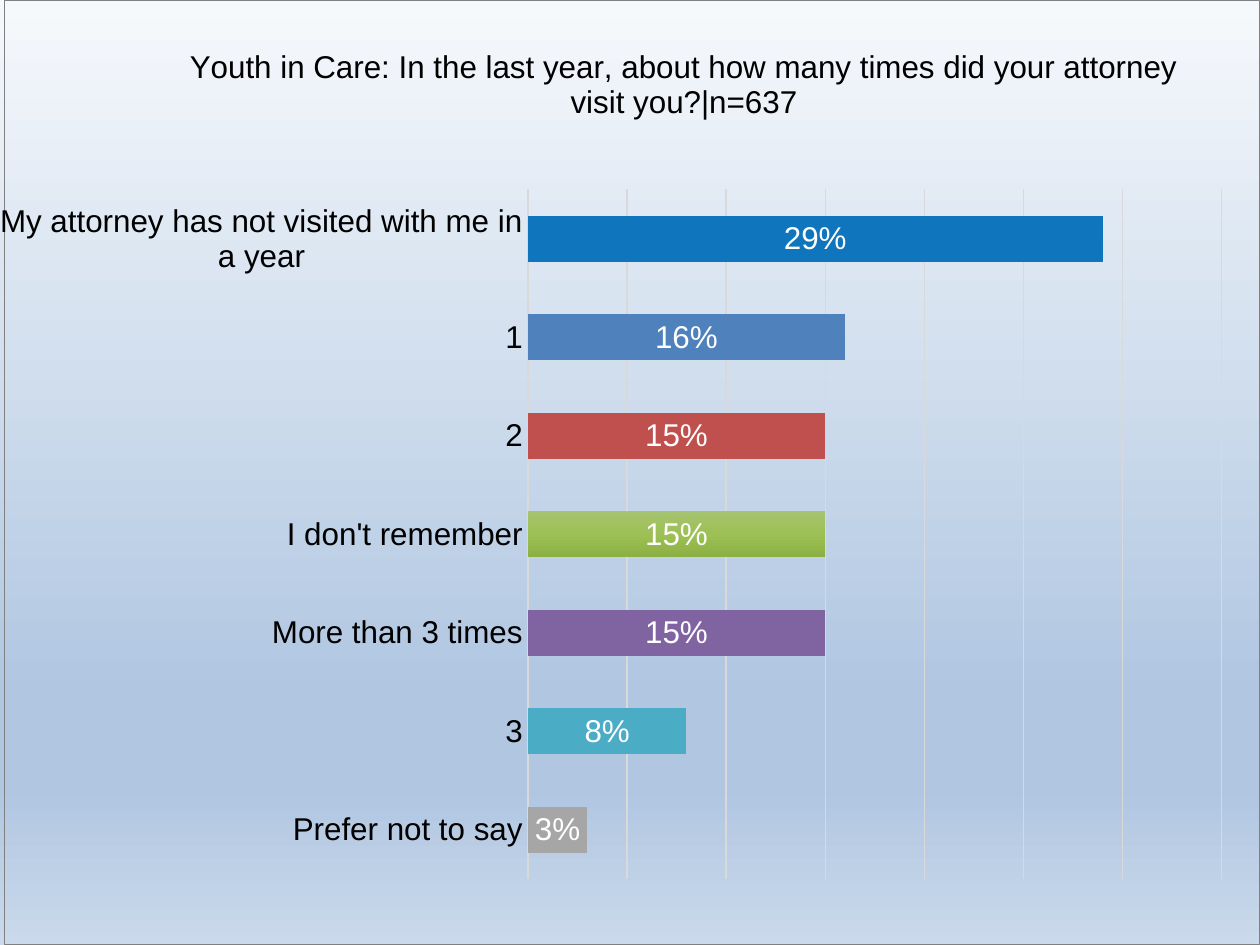
import pptx
import pptx.chart.data
import pptx.dml.color
import pptx.enum.chart
import pptx.oxml
import pptx.oxml.ns
import pptx.util
from lxml import etree

# Content
TITLE = "Youth in Care: In the last year, about how many times did your attorney visit you?|n=637"
BARS = [
    ("My attorney has not visited with me in a year", 29, "blue"),
    ("1", 16, "steel"),
    ("2", 15, "red"),
    ("I don't remember", 15, None),
    ("More than 3 times", 15, "purple"),
    ("3", 8, "teal"),
    ("Prefer not to say", 3, "gray"),
]
COLORS = {
    "blue": "0F75BD", "steel": "4F81BD", "red": "C0504D", "purple": "8064A2",
    "teal": "4BACC6", "gray": "A6A6A6", "text": "000000", "label": "FFFFFF",
    "grid": "D9D9D9", "border": "808080", "muted": "404040",
}
BACKGROUND = [(0, "F6F9FC"), (74, "B0C6E1"), (83, "B0C6E1"), (100, "CAD9EB")]
# Name, values, gradient, label size, label colour
SERIES = [
    ("Series 1", [], [(0, "688FC5"), (50, "4A80C3"), (100, "3B72B3")], 9, "muted"),
    ("Series 2", [], [(0, "C76967"), (50, "C64B47"), (100, "B63C39")], 9, "muted"),
    ("Series 3", [value for _, value, _ in BARS],
     [(0, "A6C36F"), (50, "9DC054"), (100, "8DB045")], 18, "label"),
]
FONT = "Arial"
PX = 914400 // 126
WIDTH, HEIGHT = 1260, 945

qn = pptx.oxml.ns.qn


def rgb(name):
    return pptx.dml.color.RGBColor.from_string(COLORS[name])


def set_font(font, size, color):
    font.name, font.size, font.bold = FONT, pptx.util.Pt(size), False
    font.color.rgb = rgb(color)


def set_line(line, color, width):
    line.color.rgb = rgb(color)
    line.width = pptx.util.Pt(width)


def set_gradient(fill, owner, stops):
    """Fill downwards with any number of (percent, colour) stops."""
    fill.gradient()
    fill.gradient_angle = 270
    gs_list = next(owner.iter(qn("a:gsLst")))
    for old in list(gs_list):
        gs_list.remove(old)
    for percent, color in stops:
        gs = etree.SubElement(gs_list, qn("a:gs"), pos=str(percent * 1000))
        etree.SubElement(gs, qn("a:srgbClr"), val=color)


def set_layout(parent, index, **values):
    """Place a chart part by fractions of the chart area."""
    for old in parent.findall(qn("c:layout")):
        parent.remove(old)
    layout = parent.makeelement(qn("c:layout"))
    manual = etree.SubElement(layout, qn("c:manualLayout"))
    for tag, value in values.items():
        etree.SubElement(manual, qn("c:" + tag), val=str(value))
    parent.insert(index, layout)


# Slide and background
prs = pptx.Presentation()
prs.slide_width, prs.slide_height = WIDTH * PX, HEIGHT * PX
s = prs.slides.add_slide(prs.slide_layouts[6])
set_gradient(s.background.fill, s.element, BACKGROUND)

# Chart
data = pptx.chart.data.CategoryChartData()
data.categories = [name for name, _, _ in BARS]
for name, values, *_ in SERIES:
    data.add_series(name, values)
chart = s.shapes.add_chart(pptx.enum.chart.XL_CHART_TYPE.BAR_CLUSTERED,
                           0, 0, WIDTH * PX, HEIGHT * PX, data).chart
set_font(chart.font, 10, "text")
chart.has_legend = False

# Title
chart.has_title = True
title = chart.chart_title
p = title.text_frame.paragraphs[0]
p.text = TITLE
set_font(p.font, 18, "text")
title.include_in_layout = False
set_layout(title._element, 1, xMode="edge", yMode="edge", x=0.143, y=0.042)

# Axes
cat_axis = chart.category_axis
cat_axis.reverse_order = True
cat_axis.major_tick_mark = pptx.enum.chart.XL_TICK_MARK.NONE
set_font(cat_axis.tick_labels.font, 18, "text")
set_line(cat_axis.format.line, "grid", 1)

val_axis = chart.value_axis
val_axis.visible = False
val_axis.minimum_scale, val_axis.maximum_scale, val_axis.major_unit = 0, 35, 5
val_axis.has_major_gridlines = True
set_line(val_axis.major_gridlines.format.line, "grid", 0.75)

# Series and labels
plot = chart.plots[0]
plot.gap_width, plot.overlap, plot.vary_by_categories = 115, -20, False
for series, (_, _, stops, size, color) in zip(plot.series, SERIES):
    set_gradient(series.format.fill, series._element, stops)
    labels = series.data_labels
    labels.show_value = True
    set_font(labels.font, size, color)

# Bars of the filled series
labels.number_format, labels.number_format_is_linked = r"0\%;", False
labels.position = pptx.enum.chart.XL_LABEL_POSITION.CENTER
for i, (_, _, color) in enumerate(BARS):
    if color:
        fill = series.points[i].format.fill
        fill.solid()
        fill.fore_color.rgb = rgb(color)

# Plot area and border
space = chart._chartSpace
set_layout(next(space.iter(qn("c:plotArea"))), 0, layoutTarget="inner",
           xMode="edge", yMode="edge", x=0.417, y=0.2, w=0.553, h=0.731)
space.find(qn("c:chart")).addnext(pptx.oxml.parse_xml(
    f'<c:spPr {pptx.oxml.ns.nsdecls("c", "a")}><a:noFill/><a:ln w="9525"><a:solidFill>'
    f'<a:srgbClr val="{COLORS["border"]}"/></a:solidFill></a:ln></c:spPr>'))

prs.save("out.pptx")
